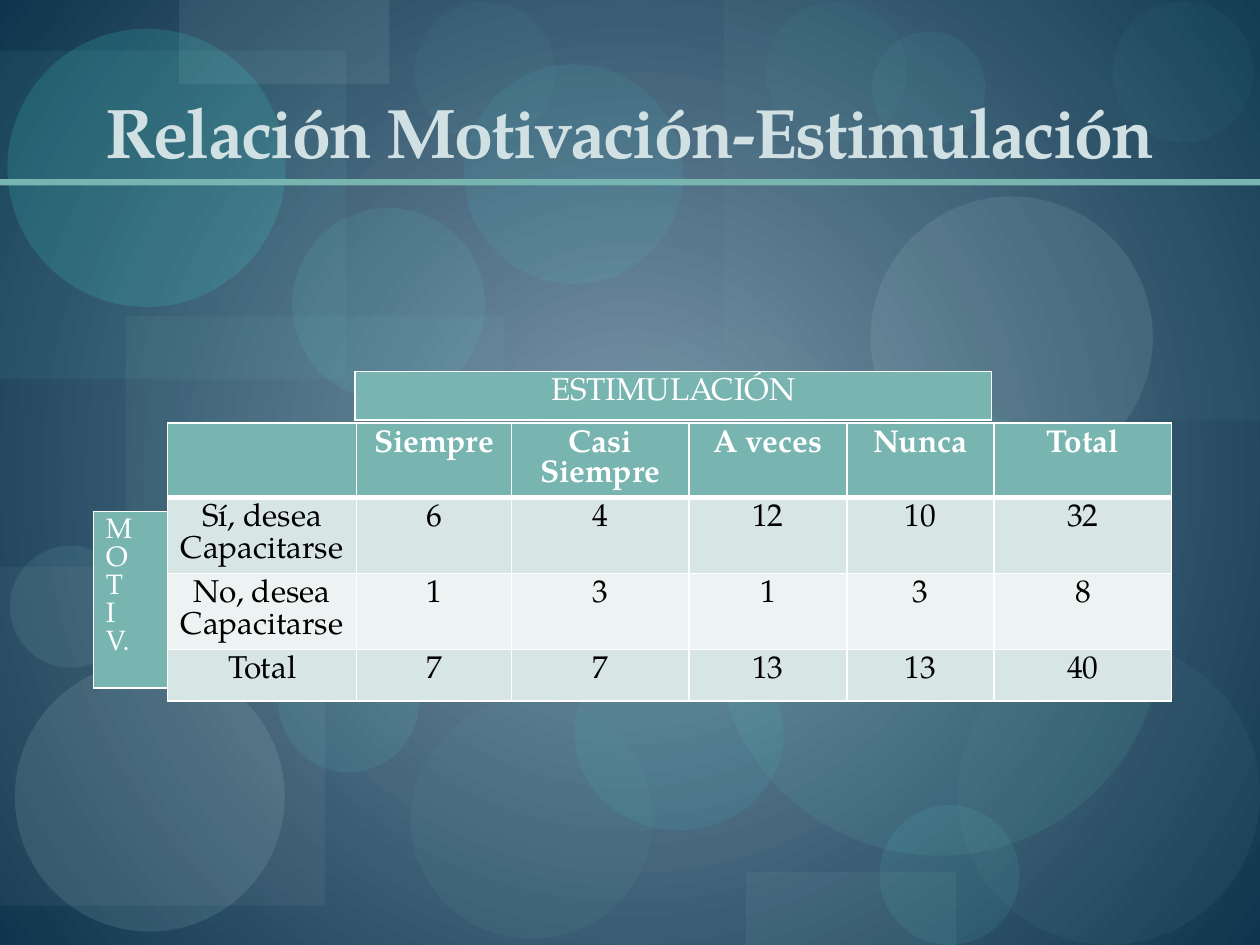
from lxml import etree
from pptx import Presentation
from pptx import util as u
from pptx.dml import color
from pptx.enum import shapes, text
from pptx.oxml import ns

FONT = "TeX Gyre Pagella"
COLORS = {
    "centre": "7B96AA", "edge": "0E354D", "teal": "79B5B0", "title": "D1E1E3",
    "white": "FFFFFF", "black": "000000", "band_dark": "D7E5E4", "band_light": "ECF3F2",
    "deep": "549791", "grey": "B2B7BA", "sage": "70A39E", "aqua": "65E8DC",
    "mist": "C1E8E4", "bright": "44EADC", "mint": "77D6CE", "pale": "BED7D4",
    "ice": "97DCD6", "sea": "61CDC4",
}
RECT, DISC = shapes.MSO_SHAPE.RECTANGLE, shapes.MSO_SHAPE.OVAL
DECORATIONS = [
    (RECT, 2.54, 6.38, 7.62, 5.92, "teal", 9),
    (DISC, 8.28, 14.1, 4.88, 4.83, "deep", 13),
    (RECT, 14.6, 0, 10.8, 8.46, "teal", 6),
    (RECT, 0, 11.43, 6.55, 6.83, "grey", 8),
    (DISC, 11.61, 6.63, 6.05, 6.05, "sage", 8),
    (DISC, 17.73, 16.23, 2.82, 2.82, "aqua", 9),
    (DISC, 17.55, 3.96, 5.69, 5.69, "mist", 11),
    (DISC, 0.3, 13.34, 5.44, 5.44, "mist", 12),
    (DISC, 5.61, 12.73, 2.84, 2.84, "aqua", 9),
    (DISC, 11.58, 12.85, 4.22, 3.89, "bright", 8),
    (RECT, 0, 1.02, 6.98, 6.63, "mint", 7),
    (RECT, 3.61, 0, 4.24, 1.7, "pale", 10),
    (DISC, 0.15, 0.58, 5.61, 5.61, "bright", 15),
    (DISC, 0.2, 11, 2.46, 2.46, "ice", 10),
    (DISC, 5.89, 4.19, 3.89, 3.89, "aqua", 9),
    (DISC, 9.35, 1.3, 4.42, 4.42, "bright", 8),
    (DISC, 14.43, 8.26, 8.99, 8.99, "sea", 10),
    (DISC, 15.44, 0.03, 2.84, 2.84, "aqua", 4),
    (DISC, 19.3, 12.95, 6.1, 6.1, "sage", 8),
    (DISC, 4.45, 10.29, 3.33, 3.33, "ice", 10),
    (DISC, 17.58, 0.64, 2.29, 2.29, "aqua", 6),
    (DISC, 22.43, 0.03, 2.84, 2.84, "aqua", 4),
    (RECT, 15.04, 17.58, 4.24, 1.47, "teal", 10),
    (DISC, 8.36, 0.03, 2.84, 2.84, "aqua", 4),
    (RECT, 0, 3.61, 25.4, 0.13, "teal", 100),
]
ANSWERS = [
    ["", "Siempre", "Casi Siempre", "A veces", "Nunca", "Total"],
    ["Sí, desea Capacitarse", "6", "4", "12", "10", "32"],
    ["No, desea Capacitarse", "1", "3", "1", "3", "8"],
    ["Total", "7", "7", "13", "13", "40"],
]
ANSWER_WIDTHS = [3.81, 3.12, 3.58, 3.18, 2.97, 3.58]


def rgb(name):
    """Return the named colour."""
    return color.RGBColor.from_string(COLORS[name])


def add_xml(parent, tag, **attributes):
    """Append a DrawingML child and return it."""
    return etree.SubElement(parent, ns.qn(tag), attributes)


def paint_background(slide):
    """Fill the slide with a gradient spreading from its centre."""
    fill = slide.background.fill
    fill.gradient()
    for stop, name, position in zip(fill.gradient_stops, ("centre", "edge"), (0, 1)):
        stop.color.rgb = rgb(name)
        stop.position = position
    gradient = slide.background._cSld.find(".//" + ns.qn("a:gradFill"))
    linear = gradient.find(ns.qn("a:lin"))
    if linear is not None:
        gradient.remove(linear)
    spread = add_xml(gradient, "a:path", path="circle")
    add_xml(spread, "a:fillToRect", l="50000", t="50000", r="50000", b="50000")


def add_decorations(slide, left, top):
    """Scatter translucent discs and panels from the given corner."""
    for kind, dx, dy, width, height, name, opacity in DECORATIONS:
        panel = slide.shapes.add_shape(
            kind, u.Cm(left + dx), u.Cm(top + dy), u.Cm(width), u.Cm(height))
        panel.shadow.inherit = False
        panel.line.fill.background()
        panel.fill.solid()
        panel.fill.fore_color.rgb = rgb(name)
        if opacity < 100:
            tint = panel._element.spPr.find(".//" + ns.qn("a:srgbClr"))
            add_xml(tint, "a:alpha", val=str(opacity * 1000))


def write_run(paragraph, words, size, name, bold=False):
    """Add one formatted run and return it."""
    run = paragraph.add_run()
    run.text = words
    run.font.name = FONT
    run.font.size = u.Pt(size)
    run.font.bold = bold
    run.font.color.rgb = rgb(name)
    return run


def place_title(slide, left, top, width, height):
    """Set the title placeholder in its box, in front of the decorations."""
    title = slide.shapes.title
    title.left, title.top = u.Cm(left), u.Cm(top)
    title.width, title.height = u.Cm(width), u.Cm(height)
    frame = title.text_frame
    frame.auto_size = text.MSO_AUTO_SIZE.NONE
    frame.vertical_anchor = text.MSO_ANCHOR.BOTTOM
    heading = frame.paragraphs[0]
    heading.alignment = text.PP_ALIGN.CENTER
    run = write_run(heading, "Relación Motivación-Estimulación", 40, "title", True)
    run.font._element.set("spc", "-100")
    slide.shapes._spTree.append(title._element)


def format_cell(cell, fill, bottom=1):
    """Fill a cell and rule it in white."""
    cell.fill.solid()
    cell.fill.fore_color.rgb = rgb(fill)
    properties = cell._tc.get_or_add_tcPr()
    for index, side in enumerate("LRTB"):
        points = bottom if side == "B" else 1
        rule = add_xml(properties, "a:ln" + side, w=str(u.Pt(points)))
        add_xml(add_xml(rule, "a:solidFill"), "a:srgbClr", val=COLORS["white"])
        properties.insert(index, rule)


def add_grid(slide, left, top, widths, heights):
    """Add an empty table with the given column widths and row heights."""
    grid = slide.shapes.add_table(
        len(heights), len(widths), u.Cm(left), u.Cm(top),
        u.Cm(sum(widths)), u.Cm(sum(heights))).table
    for column, width in zip(grid.columns, widths):
        column.width = u.Cm(width)
    for row, height in zip(grid.rows, heights):
        row.height = u.Cm(height)
    return grid


def add_answers(slide, left, top):
    """Add the cross table of motivation and stimulation."""
    answers = add_grid(slide, left, top, ANSWER_WIDTHS, [1.04] * len(ANSWERS))
    for r, row in enumerate(ANSWERS):
        header = r == 0
        band = "teal" if header else "band_dark" if r % 2 else "band_light"
        for c, words in enumerate(row):
            cell = answers.cell(r, c)
            format_cell(cell, band, 3 if header else 1)
            paragraph = cell.text_frame.paragraphs[0]
            paragraph.alignment = text.PP_ALIGN.CENTER
            if words:
                write_run(paragraph, words, 18, "white" if header else "black", header)


def add_label(slide, left, top, width, height, lines, size, alignment):
    """Add a one-cell table naming an axis of the cross table."""
    cell = add_grid(slide, left, top, [width], [height]).cell(0, 0)
    format_cell(cell, "teal")
    frame = cell.text_frame
    for index, line in enumerate(lines):
        paragraph = frame.add_paragraph() if index else frame.paragraphs[0]
        paragraph.alignment = alignment
        write_run(paragraph, line, size, "white")


def main():
    """Build and save the slide."""
    deck = Presentation()
    deck.slide_width, deck.slide_height = u.Cm(25.4), u.Cm(19.05)
    slide = deck.slides.add_slide(deck.slide_layouts[5])
    paint_background(slide)
    add_decorations(slide, 0, 0)
    place_title(slide, 1.27, 0.43, 22.86, 3.18)
    add_answers(slide, 3.38, 8.53)
    add_label(slide, 7.16, 7.49, 12.83, 0.98, ["ESTIMULACIÓN"], 18, text.PP_ALIGN.CENTER)
    add_label(slide, 1.88, 10.31, 1.5, 3.56, ["M", "O", "T", "I", "V."], 16, text.PP_ALIGN.LEFT)
    deck.save("out.pptx")


if __name__ == "__main__":
    main()
